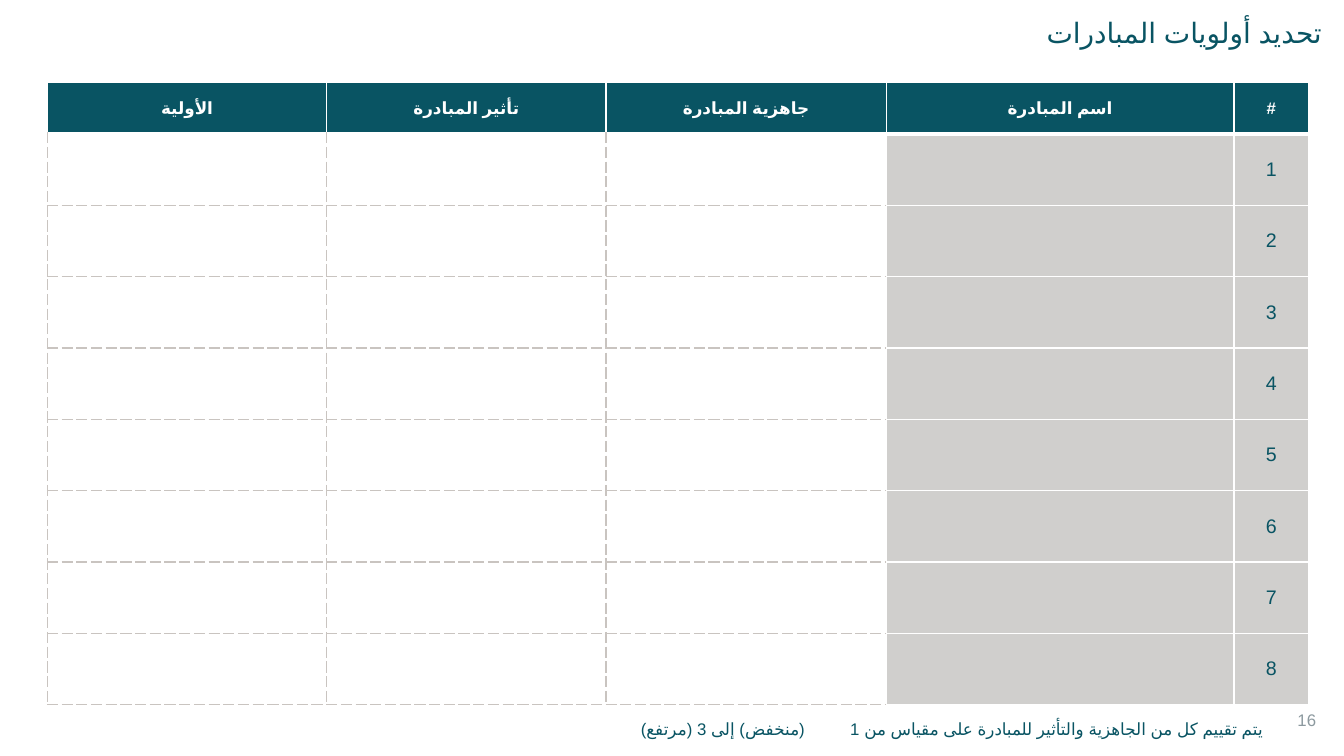
from pptx import Presentation
from pptx import util as u
from pptx.dml import color
from pptx.enum import text
from pptx.oxml import ns
from lxml import etree

COLORS = {"teal": "095463", "white": "FFFFFF", "grey": "D0CFCD",
          "dash": "C9C4C0", "number": "8C999F"}
HEADERS = ["الأولية", "تأثير المبادرة", "جاهزية المبادرة", "اسم المبادرة", "#"]
COLUMN_WIDTHS = [2.77, 2.77, 2.78, 3.45, 0.74]
SCALE_NOTE = ["يتم تقييم كل من الجاهزية والتأثير للمبادرة على مقياس من 1",
              "(منخفض) إلى 3 (مرتفع)"]
INITIATIVES = 8
HEADER_HEIGHT = 0.51
SHADED_FROM = 3
ALIGN = text.PP_ALIGN


def rgb(name):
    """Return the named colour."""
    return color.RGBColor.from_string(COLORS[name])


def add_span(para, words, size, font, ink, bold=False, tracking=0):
    """Add one formatted run of Arabic text to a paragraph."""
    span = para.add_run()
    span.text = words
    span.font.size = u.Pt(size)
    span.font.bold = bold
    span.font.name = font
    span.font.color.rgb = rgb(ink)
    properties = span.font._element
    properties.set("lang", "ar-SA")
    if tracking:
        properties.set("spc", str(tracking * 100))
    etree.SubElement(properties, ns.qn("a:cs"), typeface="Arial")


def write(frame, parts, align=ALIGN.RIGHT, rtl=True, spacing=None, gap=0, **style):
    """Write one paragraph whose parts are set apart by a gap in points."""
    para = frame.paragraphs[0]
    para.alignment = align
    if spacing:
        para.line_spacing = spacing
    para._p.get_or_add_pPr().set("rtl", "1" if rtl else "0")
    for index, words in enumerate(parts):
        if index:
            add_span(para, " ", tracking=gap, **style)
        add_span(para, words, **style)


def add_text(page, box, parts, **style):
    """Place a wrapped text box holding one paragraph."""
    frame = page.shapes.add_textbox(*map(u.Inches, box)).text_frame
    frame.word_wrap = True
    write(frame, parts, **style)


def set_borders(cell, edges):
    """Draw the left, right, top and bottom borders of a cell."""
    properties = cell._tc.get_or_add_tcPr()
    for index, (side, (ink, width)) in enumerate(zip("LRTB", edges)):
        line = etree.Element(ns.qn(f"a:ln{side}"), w=str(u.Pt(width)))
        fill = etree.SubElement(line, ns.qn("a:solidFill"))
        etree.SubElement(fill, ns.qn("a:srgbClr"), val=COLORS[ink])
        etree.SubElement(line, ns.qn("a:prstDash"),
                         val="dash" if ink == "dash" else "solid")
        properties.insert(index, line)


def cell_edges(row, column):
    """Choose the border of each side from the position of a cell."""
    thin, thick, dashed = ("white", 1), ("white", 3), ("dash", 1)
    if row == 0:
        return thin, thin, thin, thick
    inner = thin if column >= SHADED_FROM else dashed
    right = thin if column >= SHADED_FROM - 1 else dashed
    return inner, right, thick if row == 1 else inner, inner


def add_priorities(page, box):
    """Build the table of initiatives and their scores."""
    table = page.shapes.add_table(INITIATIVES + 1, len(HEADERS),
                                  *map(u.Inches, box)).table
    for column, width in zip(table.columns, COLUMN_WIDTHS):
        column.width = u.Inches(width)
    body_height = (box[3] - HEADER_HEIGHT) / INITIATIVES
    for row, line in enumerate(table.rows):
        line.height = u.Inches(body_height if row else HEADER_HEIGHT)
        for column, cell in enumerate(line.cells):
            body = "grey" if column >= SHADED_FROM else "white"
            cell.fill.solid()
            cell.fill.fore_color.rgb = rgb(body if row else "teal")
            cell.vertical_anchor = text.MSO_ANCHOR.MIDDLE
            set_borders(cell, cell_edges(row, column))
            if row == 0:
                write(cell.text_frame, [HEADERS[column]], align=ALIGN.CENTER,
                      size=12, font="Karla", ink="white", bold=True)
            elif column == len(HEADERS) - 1:
                write(cell.text_frame, [str(row)], align=ALIGN.CENTER,
                      size=14, font="Arial", ink="teal")


def add_page(deck):
    """Add the slide that ranks the initiatives."""
    page = deck.slides.add_slide(deck.slide_layouts[6])
    add_text(page, (12.77, 6.99, 0.44, 0.4), ["16"], size=12, font="Arial",
             ink="number", align=ALIGN.LEFT, rtl=False)
    add_text(page, (0.69, 0.14, 12.52, 0.62), ["تحديد أولويات المبادرات"],
             size=20, font="Arial", ink="teal", spacing=0.9)
    add_priorities(page, (0.47, 0.82, 12.52, 6.17))
    add_text(page, (6.06, 7.08, 6.57, 0.3), SCALE_NOTE, gap=29,
             size=12, font="Roboto", ink="teal")


def main():
    """Create and save the deck."""
    deck = Presentation()
    deck.slide_width = u.Inches(13.33)
    deck.slide_height = u.Inches(7.5)
    add_page(deck)
    deck.save("out.pptx")


if __name__ == "__main__":
    main()
